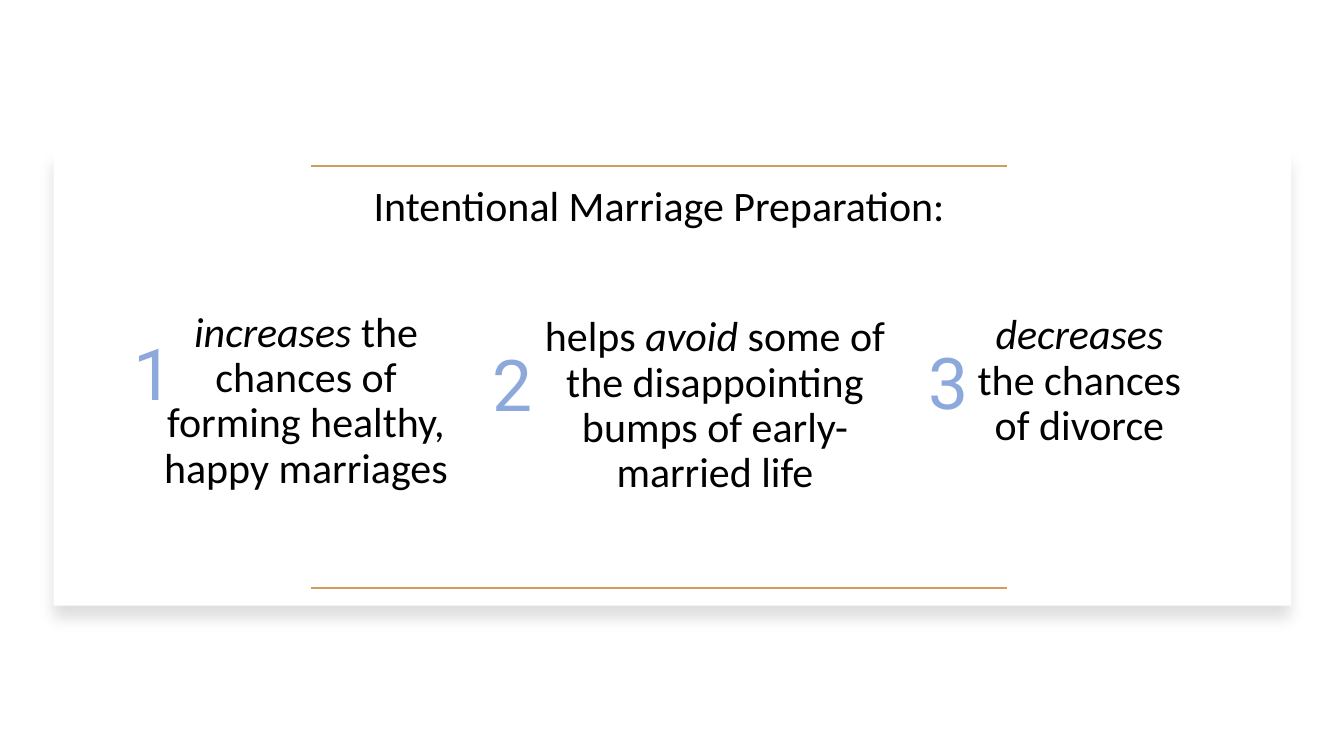
from lxml.etree import SubElement
from pptx import Presentation
from pptx.dml.color import RGBColor
from pptx.enum.shapes import MSO_CONNECTOR, MSO_SHAPE
from pptx.enum.text import MSO_ANCHOR, MSO_AUTO_SIZE, PP_ALIGN
from pptx.oxml.ns import qn
from pptx.util import Cm, Pt

COLORS = {"panel": "FFFFFF", "shadow": "000000", "rule": "D09D5C",
          "text": "000000", "number": "8DA9DB"}

BENEFITS = [
    ((3.78, 7.42, 7.87, 5.11), (-0.66, 0.63),
     [("increases", True), (" the chances of forming healthy, happy marriages", False)]),
    ((13.23, 6.76, 9.58, 5.89), (-1.06, 1.57),
     [("helps", False), (" avoid", True),
      (" some of the disappointing bumps of early-married life", False)]),
    ((24.18, 7.98, 6.05, 3.48), (-1.04, 0.28),
     [("decreases", True), (" the chances of divorce", False)]),
]


def color(key):
    """Return the named colour."""
    return RGBColor.from_string(COLORS[key])


def add_panel(shapes, box):
    """Draw the white panel with its soft shadow below."""
    panel = shapes.add_shape(MSO_SHAPE.RECTANGLE, *map(Cm, box))
    panel.shadow.inherit = False
    panel.fill.solid()
    panel.fill.fore_color.rgb = color("panel")
    panel.line.fill.background()
    effects = panel._element.spPr.find(qn("a:effectLst"))
    shadow = SubElement(effects, qn("a:outerShdw"), blurRad=str(Pt(11)),
                        dist=str(Pt(10)), dir="5400000", algn="t", rotWithShape="0")
    tint = SubElement(shadow, qn("a:srgbClr"), val=COLORS["shadow"])
    SubElement(tint, qn("a:alpha"), val="13000")


def add_rules(shapes, box):
    """Draw a gold rule along the top and the bottom of the box."""
    left, top, width, height = box
    for y in (top, top + height):
        rule = shapes.add_connector(MSO_CONNECTOR.STRAIGHT,
                                    Cm(left), Cm(y), Cm(left + width), Cm(y))
        rule.line.color.rgb = color("rule")
        rule.line.width = Pt(1.5)
        SubElement(rule._element.spPr, qn("a:effectLst"))


def add_statement(shapes, box, pieces):
    """Write centred text from pieces of wording, each italic or not."""
    frame = shapes.add_textbox(*map(Cm, box)).text_frame
    frame.word_wrap = True
    frame.vertical_anchor = MSO_ANCHOR.BOTTOM
    paragraph = frame.paragraphs[0]
    paragraph.alignment = PP_ALIGN.CENTER
    paragraph.line_spacing = 0.9
    for wording, italic in pieces:
        run = paragraph.add_run()
        run.text = wording
        run.font.name = "Calibri"
        run.font.size = Pt(30)
        run.font.italic = italic
        run.font.color.rgb = color("text")


def add_number(shapes, box, number):
    """Write a large blue number."""
    frame = shapes.add_textbox(*map(Cm, box)).text_frame
    frame.word_wrap = True
    frame.auto_size = MSO_AUTO_SIZE.SHAPE_TO_FIT_TEXT
    frame.margin_left = frame.margin_right = Cm(0.25)
    frame.margin_top = frame.margin_bottom = Cm(0.25)
    frame.text = str(number)
    font = frame.paragraphs[0].runs[0].font
    font.name = "Roboto"
    font.size = Pt(51)
    font.color.rgb = color("number")


def add_benefit(shapes, box, number_offset, number, pieces):
    """Group a statement in the box with its number, offset from the box corner."""
    benefit = shapes.add_group_shape()
    add_statement(benefit.shapes, box, pieces)
    dx, dy = number_offset
    add_number(benefit.shapes, (box[0] + dx, box[1] + dy, 1.3, 2.69), number)


def main():
    """Build the slide and save it."""
    presentation = Presentation()
    presentation.slide_width, presentation.slide_height = Cm(33.87), Cm(19.05)
    shapes = presentation.slides.add_slide(presentation.slide_layouts[6]).shapes
    add_panel(shapes, (1.35, 3.78, 31.19, 11.48))
    add_statement(shapes, (7.85, 4.19, 17.53, 1.75),
                  [("Intentional Marriage Preparation:", False)])
    add_rules(shapes, (7.85, 4.19, 17.53, 10.62))
    for number, (box, number_offset, pieces) in enumerate(BENEFITS, 1):
        add_benefit(shapes, box, number_offset, number, pieces)
    presentation.save("out.pptx")


if __name__ == "__main__":
    main()
